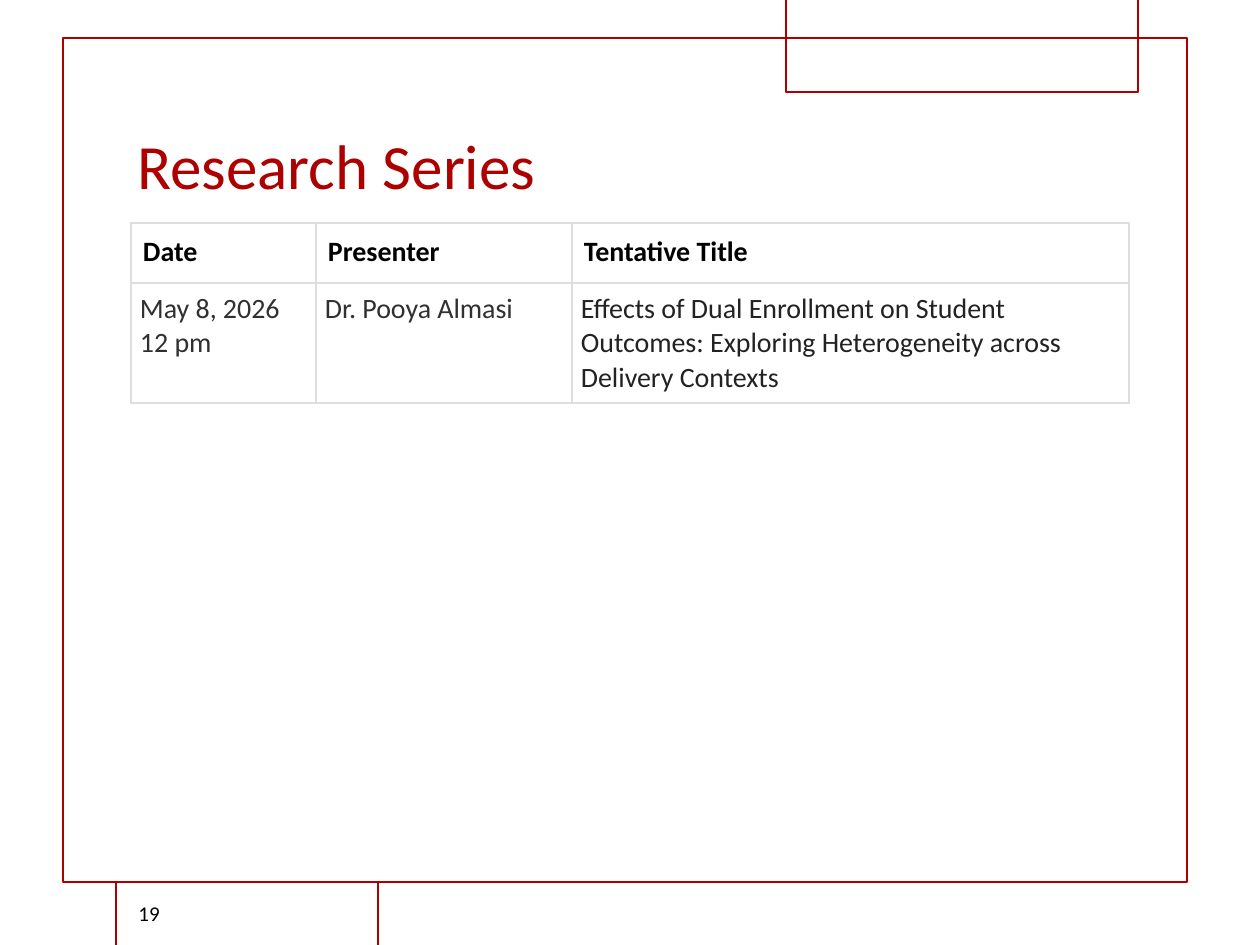
from lxml import etree
from pptx import Presentation
from pptx.dml.color import RGBColor
from pptx.enum.shapes import MSO_SHAPE
from pptx.enum.text import MSO_ANCHOR
from pptx.oxml.ns import qn
from pptx.util import Emu, Pt

RECT = MSO_SHAPE.RECTANGLE
TOP, MIDDLE, BOTTOM = MSO_ANCHOR.TOP, MSO_ANCHOR.MIDDLE, MSO_ANCHOR.BOTTOM
PX = 914400 // 126
FONT = "Calibri"
COLORS = {"red": "AD0101", "white": "FFFFFF", "black": "000000",
          "body": "303030", "topic": "222222", "grid": "DEDEE0"}

# left, top, width, height, fill
FRAMES = [
    (63, 38, 1124, 844, "white"),
    (116, 882, 262, 64, "white"),
    (786, -1, 352, 93, None),
]
# text, box, size, color, anchor
LABELS = [
    ("Research Series", (125, 103, 1010, 105), 36, "red", BOTTOM),
    ("19", (126, 888, 84, 50), 12, "black", MIDDLE),
]
TABLE_AT = (131, 223)
COLS = [185, 256, 557]
# height, cell margin, bold, border widths by side, text colors, texts
ROWS = [
    (60, 12, True, {"L": 0.75, "R": 0.75, "T": 0.75, "B": 0.75},
     ["black", "black", "black"],
     ["Date", "Presenter", "Tentative Title"]),
    (120, 9, False, {"L": 1, "R": 1, "T": 0.75, "B": 1},
     ["body", "body", "topic"],
     ["May 8, 2026\n12 pm", "Dr. Pooya Almasi",
      "Effects of Dual Enrollment on Student Outcomes: "
      "Exploring Heterogeneity across Delivery Contexts"]),
]


def rgb(name):
    return RGBColor.from_string(COLORS[name])


def px(*values):
    return [Emu(value * PX) for value in values]


def style(frame, size, color, bold=False):
    for para in frame.paragraphs:
        for run in para.runs:
            font = run.font
            font.name, font.size, font.bold = FONT, Pt(size), bold
            font.color.rgb = rgb(color)


def add_frame(slide, box, fill):
    shape = slide.shapes.add_shape(RECT, *px(*box))
    shape.shadow.inherit = False
    if fill:
        shape.fill.solid()
        shape.fill.fore_color.rgb = rgb(fill)
    else:
        shape.fill.background()
    shape.line.color.rgb = rgb("red")
    shape.line.width = Pt(1.25)


def add_label(slide, text, box, size, color, anchor):
    frame = slide.shapes.add_textbox(*px(*box)).text_frame
    frame.word_wrap = True
    frame.vertical_anchor = anchor
    frame.text = text
    style(frame, size, color)


def add_borders(cell, sides):
    props = cell._tc.get_or_add_tcPr()
    for side, width in sides.items():
        line = etree.SubElement(props, qn(f"a:ln{side}"), w=str(Pt(width)))
        fill = etree.SubElement(line, qn("a:solidFill"))
        etree.SubElement(fill, qn("a:srgbClr"), val=COLORS["grid"])


def add_grid(slide):
    size = (sum(COLS), sum(row[0] for row in ROWS))
    table = slide.shapes.add_table(len(ROWS), len(COLS),
                                   *px(*TABLE_AT, *size)).table
    for col, width in zip(table.columns, COLS):
        col.width = Emu(width * PX)
    for row, (height, gap, bold, sides, colors, texts) in zip(table.rows, ROWS):
        row.height = Emu(height * PX)
        for cell, color, text in zip(row.cells, colors, texts):
            cell.text_frame.text = text
            style(cell.text_frame, 16, color, bold)
            (cell.margin_left, cell.margin_top,
             cell.margin_right, cell.margin_bottom) = px(*[gap] * 4)
            cell.vertical_anchor = TOP
            add_borders(cell, sides)
            cell.fill.background()


def main():
    deck = Presentation()
    deck.slide_width, deck.slide_height = px(1260, 945)
    slide = deck.slides.add_slide(deck.slide_layouts[6])
    for *box, fill in FRAMES:
        add_frame(slide, box, fill)
    for label in LABELS:
        add_label(slide, *label)
    add_grid(slide)
    deck.save("out.pptx")


if __name__ == "__main__":
    main()
